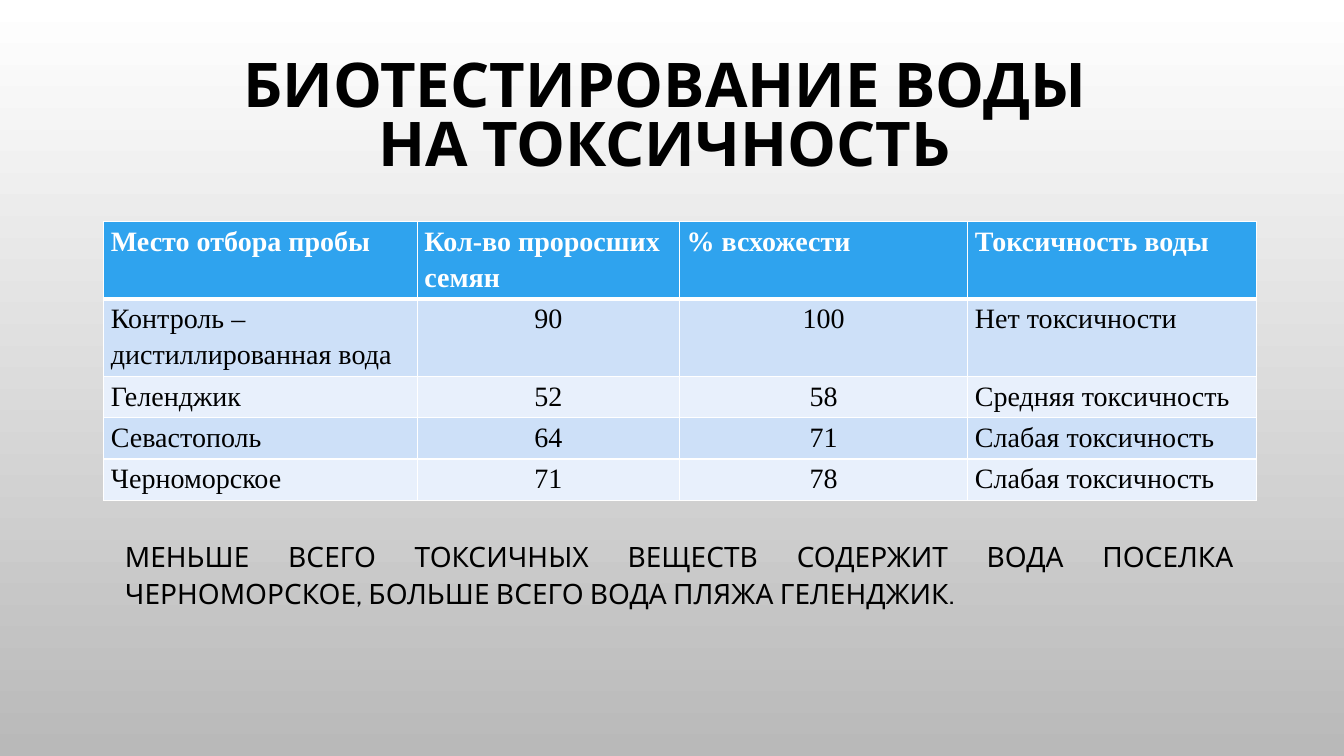
from dataclasses import dataclass

from lxml.etree import SubElement
from pptx import Presentation
from pptx.dml.color import RGBColor as Rgb
from pptx.enum.text import MSO_ANCHOR as Anchor, PP_ALIGN as Align
from pptx.oxml.ns import qn
from pptx.slide import Slide
from pptx.table import _Cell as Cell
from pptx.util import Inches, Pt


@dataclass(frozen=True)
class Theme:
    heading_font: str = "Cabin"
    table_font: str = "Times New Roman"
    title_size: int = 44
    text_size: int = 20
    ink: str = "000000"
    white: str = "FFFFFF"
    background_end: str = "B9B9B9"
    header_fill: str = "2FA3EE"
    band_fills: tuple[str, str] = ("CDE0F8", "E8F0FC")


@dataclass(frozen=True)
class TextBlock:
    text: str
    left: float
    top: float
    width: float
    height: float
    size: int
    alignment: Align
    line_spacing: float
    anchor: Anchor = Anchor.TOP
    bold: bool = False


@dataclass(frozen=True)
class Sample:
    place: str
    sprouted: str
    germination: str
    toxicity: str

    def values(self) -> tuple[str, ...]:
        return self.place, self.sprouted, self.germination, self.toxicity


THEME = Theme()
TEXT_BLOCKS = (
    TextBlock("БИОТЕСТИРОВАНИЕ ВОДЫ \vНА ТОКСИЧНОСТЬ ", 1, 0.31, 11.33, 1.75,
              THEME.title_size, Align.CENTER, 0.8, Anchor.MIDDLE, True),
    TextBlock("МЕНЬШЕ ВСЕГО ТОКСИЧНЫХ ВЕЩЕСТВ СОДЕРЖИТ ВОДА ПОСЕЛКА "
              "ЧЕРНОМОРСКОЕ, БОЛЬШЕ ВСЕГО ВОДА ПЛЯЖА ГЕЛЕНДЖИК.",
              1.14, 5.28, 11.19, 1.05,
              THEME.text_size, Align.JUSTIFY, 1.08),
)
SAMPLES = (
    Sample("Место отбора пробы", "Кол-во проросших семян", "% всхожести", "Токсичность воды"),
    Sample("Контроль – дистиллированная вода", "90", "100", "Нет токсичности"),
    Sample("Геленджик", "52", "58", "Средняя токсичность"),
    Sample("Севастополь", "64", "71", "Слабая токсичность"),
    Sample("Черноморское", "71", "78", "Слабая токсичность"),
)
COLUMN_WIDTHS = (3.11, 2.6, 2.86, 2.86)
ROW_HEIGHT = 0.41
NUMBER_COLUMNS = (1, 2)


def paint_background(slide: Slide) -> None:
    fill = slide.background.fill
    fill.gradient()
    fill.gradient_angle = 270
    for stop, color in zip(fill.gradient_stops, (THEME.white, THEME.background_end)):
        stop.color.rgb = Rgb.from_string(color)


def add_text_block(slide: Slide, block: TextBlock) -> None:
    box = slide.shapes.add_textbox(Inches(block.left), Inches(block.top),
                                   Inches(block.width), Inches(block.height))
    frame = box.text_frame
    frame.word_wrap = True
    frame.vertical_anchor = block.anchor
    paragraph = frame.paragraphs[0]
    paragraph.text = block.text
    paragraph.alignment = block.alignment
    paragraph.line_spacing = block.line_spacing
    font = paragraph.font
    font.name, font.size, font.bold = THEME.heading_font, Pt(block.size), block.bold
    font.color.rgb = Rgb.from_string(THEME.ink)


def add_borders(cell: Cell, top: int, bottom: int) -> None:
    """Draw white cell edges; must run before the fill is set."""
    properties = cell._tc.get_or_add_tcPr()
    for tag, width in (("a:lnL", 1), ("a:lnR", 1), ("a:lnT", top), ("a:lnB", bottom)):
        line = SubElement(properties, qn(tag), w=str(Pt(width)))
        fill = SubElement(line, qn("a:solidFill"))
        SubElement(fill, qn("a:srgbClr"), val=THEME.white)


def format_cell(cell: Cell, text: str, row: int, column: int) -> None:
    is_header = row == 0
    add_borders(cell, top=3 if row == 1 else 1, bottom=3 if is_header else 1)
    cell.fill.solid()
    fill = THEME.header_fill if is_header else THEME.band_fills[(row - 1) % 2]
    cell.fill.fore_color.rgb = Rgb.from_string(fill)
    cell.margin_left = cell.margin_right = Inches(0.07)
    cell.margin_top = cell.margin_bottom = 0
    paragraph = cell.text_frame.paragraphs[0]
    paragraph.text = text
    paragraph.line_spacing = 1.15
    centred = column in NUMBER_COLUMNS and not is_header
    paragraph.alignment = Align.CENTER if centred else Align.LEFT
    font = paragraph.font
    font.name, font.size, font.bold = THEME.table_font, Pt(THEME.text_size), is_header
    font.color.rgb = Rgb.from_string(THEME.white if is_header else THEME.ink)


def add_toxicity_table(slide: Slide) -> None:
    table = slide.shapes.add_table(
        len(SAMPLES), len(COLUMN_WIDTHS), Inches(1.03), Inches(2.2),
        Inches(sum(COLUMN_WIDTHS)), Inches(ROW_HEIGHT * len(SAMPLES))).table
    for column, width in zip(table.columns, COLUMN_WIDTHS):
        column.width = Inches(width)
    for row, sample in enumerate(SAMPLES):
        table.rows[row].height = Inches(ROW_HEIGHT)
        for column, text in enumerate(sample.values()):
            format_cell(table.cell(row, column), text, row, column)


def main() -> None:
    presentation = Presentation()
    presentation.slide_width, presentation.slide_height = Inches(13.33), Inches(7.5)
    slide = presentation.slides.add_slide(presentation.slide_layouts[6])
    paint_background(slide)
    title, conclusion = TEXT_BLOCKS
    add_text_block(slide, title)
    add_toxicity_table(slide)
    add_text_block(slide, conclusion)
    presentation.save("out.pptx")


if __name__ == "__main__":
    main()
